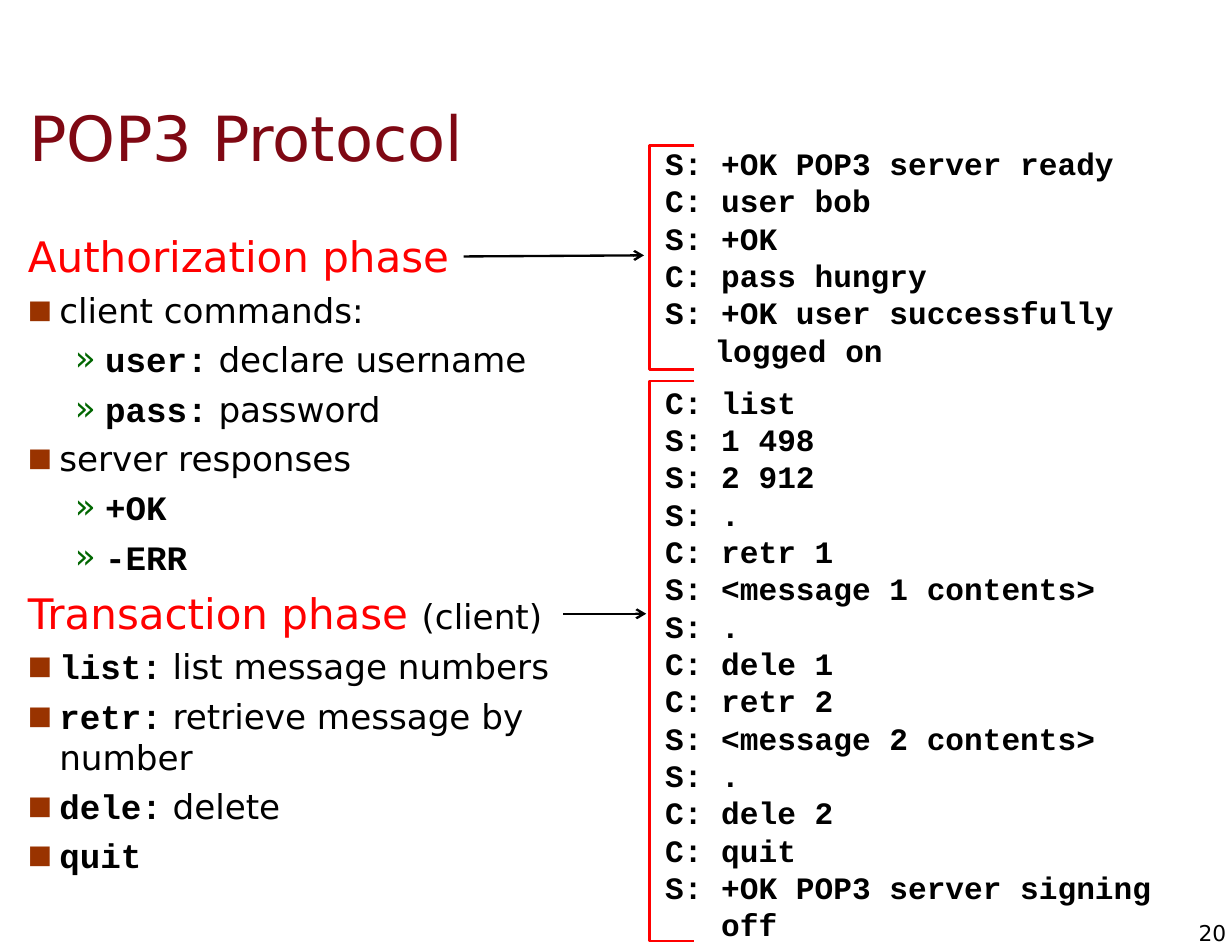
from lxml.etree import SubElement
from pptx import Presentation
from pptx.dml.color import RGBColor
from pptx.enum.shapes import MSO_CONNECTOR
from pptx.enum.text import MSO_ANCHOR, PP_ALIGN
from pptx.oxml.ns import qn
from pptx.util import Inches, Pt

SANS, MONO = "DejaVu Sans", "Courier New"
BLACK, RED, MAROON = "000000", "FF0000", "7F0813"

presentation = Presentation()
presentation.slide_width, presentation.slide_height = Inches(11), Inches(8.5)
slide = presentation.slides.add_slide(presentation.slide_layouts[6])

# Square grid of 110 columns by 85 rows
CELL = presentation.slide_width // 110


def add_text_frame(left, top, width, height, margins=(1.1, 0.6)):
    """Add a wrapping text box, placed in grid cells, and return its frame."""
    box = slide.shapes.add_textbox(*(round(n * CELL) for n in (left, top, width, height)))
    frame = box.text_frame
    frame.word_wrap = True
    frame.margin_left = frame.margin_right = round(margins[0] * CELL)
    frame.margin_top = frame.margin_bottom = round(margins[1] * CELL)
    return frame


def style(run, font_name, size, color=BLACK, bold=False):
    run.font.name, run.font.size, run.font.bold = font_name, Pt(size), bold
    run.font.color.rgb = RGBColor.from_string(color)


# Title
title = add_text_frame(1.5, 7, 105.3, 10.4)
title.vertical_anchor = MSO_ANCHOR.MIDDLE
title.text = "POP3 Protocol"
style(title.paragraphs[0].runs[0], SANS, 40, MAROON)

# Phases and commands: (level, monospaced or heading part, plain part)
outline = [
    ("heading", "Authorization phase", ""),
    ("item", "", "client commands:"),
    ("subitem", "user:", " declare username"),
    ("subitem", "pass:", " password"),
    ("item", "", "server responses"),
    ("subitem", "+OK", ""),
    ("subitem", "-ERR", ""),
    ("heading", "Transaction phase ", "(client)"),
    ("item", "list:", " list message numbers"),
    ("item", "retr:", " retrieve message by number"),
    ("item", "dele:", " delete"),
    ("item", "quit", ""),
]
# Level: left margin, hanging indent, space before, bullet (colour, percent, character)
levels = {
    "heading": (4.2, 2.8, 6.5, None),
    "item": (4.2, 2.8, 5.3, ("993300", 75, "■")),
    "subitem": (8.3, 2.7, 5.3, ("006600", 100, "»")),
}
body = add_text_frame(0, 20, 53.6, 57.6)
for index, (level, lead, plain) in enumerate(outline):
    paragraph = body.paragraphs[0] if index == 0 else body.add_paragraph()
    margin, hanging, space, bullet = levels[level]
    paragraph.space_before = Pt(space if index else 0)
    properties = paragraph._p.get_or_add_pPr()
    properties.set("marL", str(round(margin * CELL)))
    properties.set("indent", str(round(-hanging * CELL)))
    if bullet:
        color, percent, character = bullet
        SubElement(SubElement(properties, qn("a:buClr")), qn("a:srgbClr"), val=color)
        SubElement(properties, qn("a:buSzPct"), val=str(percent * 1000))
        SubElement(properties, qn("a:buFont"), typeface=SANS)
        SubElement(properties, qn("a:buChar"), char=character)
    if lead:
        run = paragraph.add_run()
        run.text = lead
        if level == "heading":
            style(run, SANS, 27, RED)
        else:
            style(run, MONO, 22, bold=True)
    if plain:
        run = paragraph.add_run()
        run.text = plain
        style(run, SANS, 22)

# Sessions: text top, hanging indent, bracket top and bottom, arrow ends, lines
sessions = [
    (12.3, 4.4, 12.8, 33.2, (41.4, 22.9, 57.5, 22.8), [
        "S: +OK POP3 server ready", "C: user bob", "S: +OK", "C: pass hungry",
        "S: +OK user successfully logged on"]),
    (33.6, 5, 34.4, 84.3, (50.3, 54.8, 57.7, 54.8), [
        "C: list", "S: 1 498", "S: 2 912", "S: .",
        "C: retr 1", "S: <message 1 contents>", "S: .", "C: dele 1",
        "C: retr 2", "S: <message 2 contents>", "S: .", "C: dele 2",
        "C: quit", "S: +OK POP3 server signing off"]),
]
BRACKET_LEFT, BRACKET_RIGHT = 57.75, 62.2
for text_top, hanging, top, bottom, arrow_ends, lines in sessions:
    frame = add_text_frame(58.3, text_top, 48.3, bottom - text_top)
    frame.text = "\n".join(lines)
    for paragraph in frame.paragraphs:
        paragraph.line_spacing = Pt(24)
        properties = paragraph._p.get_or_add_pPr()
        properties.set("marL", str(round(hanging * CELL)))
        properties.set("indent", str(round(-hanging * CELL)))
        style(paragraph.runs[0], MONO, 20, bold=True)

    builder = slide.shapes.build_freeform(BRACKET_RIGHT, top, scale=CELL)
    builder.add_line_segments(
        [(BRACKET_LEFT, top), (BRACKET_LEFT, bottom), (BRACKET_RIGHT, bottom)], close=False)
    bracket = builder.convert_to_shape()
    bracket.shadow.inherit = False
    bracket.fill.background()
    bracket.line.color.rgb = RGBColor.from_string(RED)
    bracket.line.width = Pt(1.5)

    arrow = slide.shapes.add_connector(
        MSO_CONNECTOR.STRAIGHT, *(round(n * CELL) for n in arrow_ends))
    arrow.line.color.rgb = RGBColor.from_string(BLACK)
    arrow.line.width = Pt(1.5)
    SubElement(arrow.line._get_or_add_ln(), qn("a:tailEnd"), type="arrow")
    SubElement(arrow._element.spPr, qn("a:effectLst"))

# Slide number
number = add_text_frame(106.1, 82.1, 3.4, 2.4, margins=(0, 0))
number.word_wrap = False
number.vertical_anchor = MSO_ANCHOR.MIDDLE
number.text = "20"
number.paragraphs[0].alignment = PP_ALIGN.RIGHT
style(number.paragraphs[0].runs[0], SANS, 14)

presentation.save("out.pptx")
